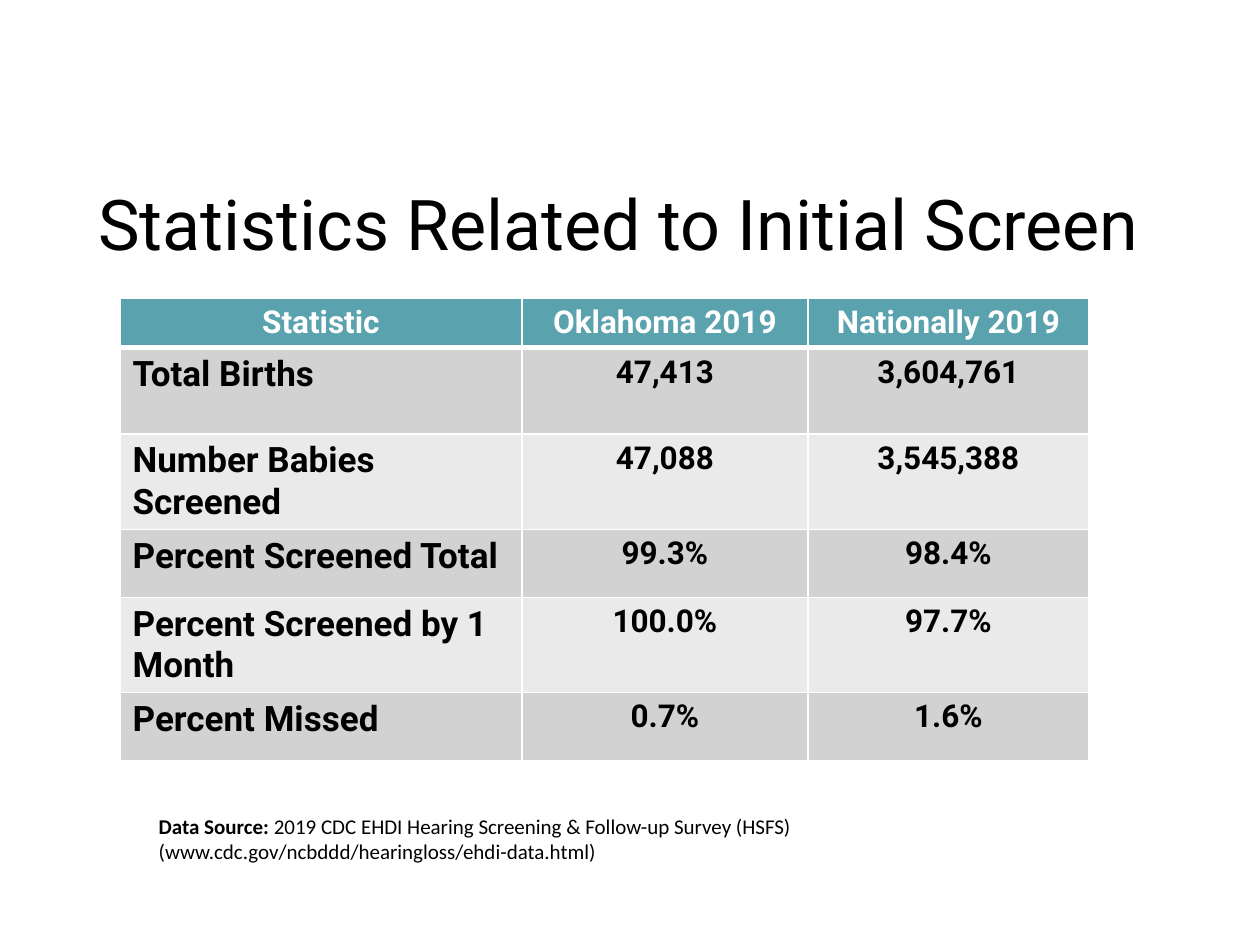
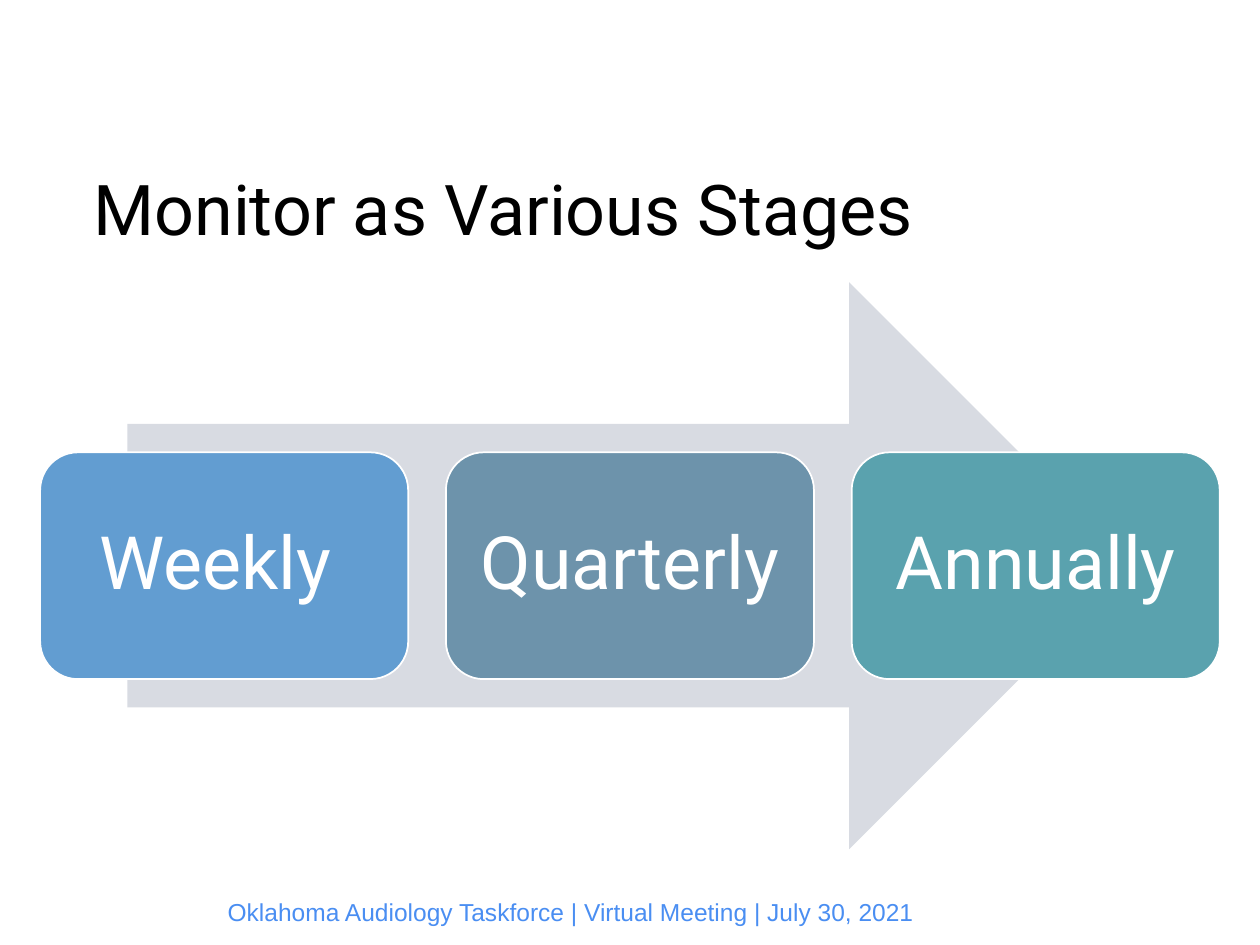
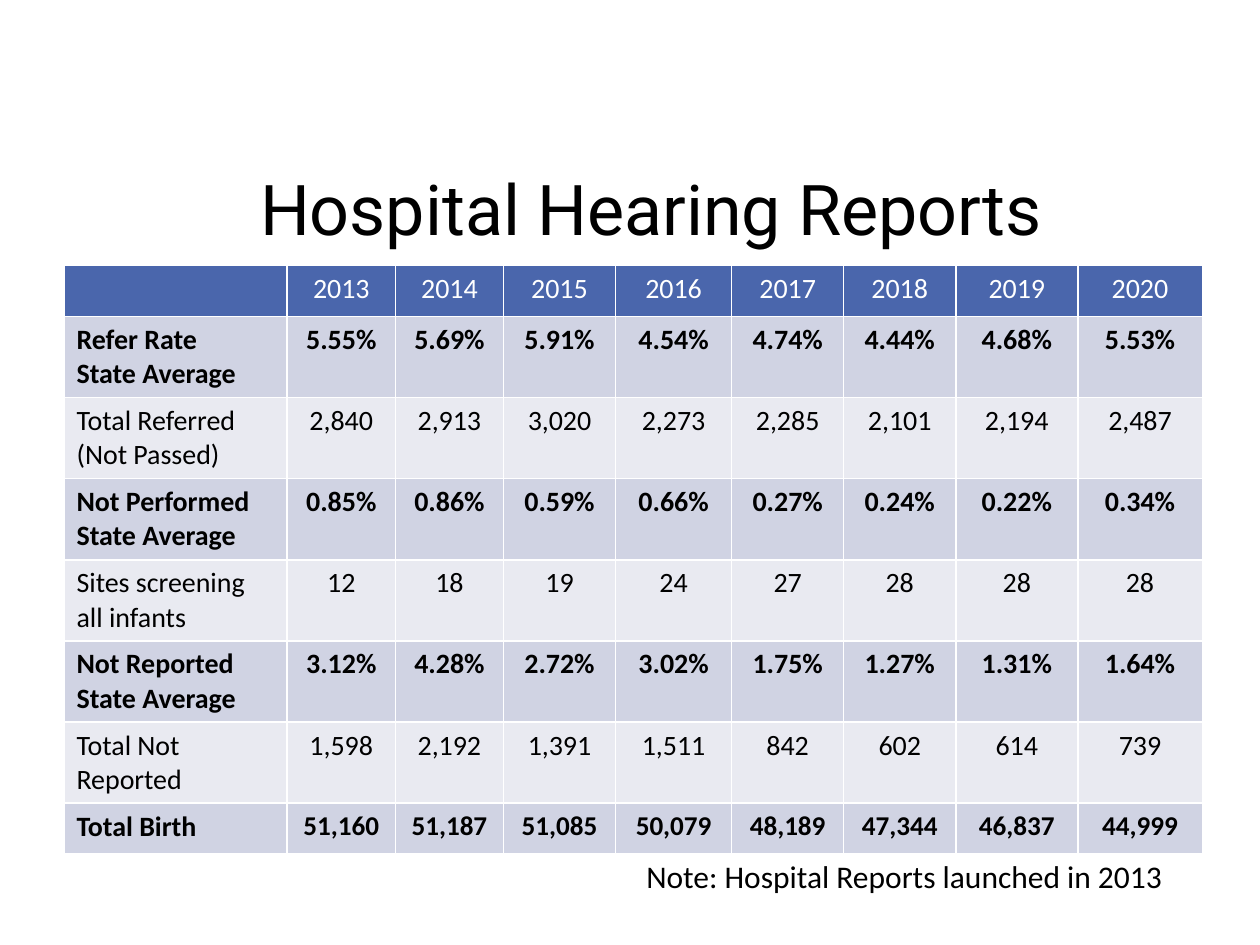
from lxml import etree
from pptx import Presentation
from pptx.dml.color import RGBColor
from pptx.enum.shapes import MSO_SHAPE
from pptx.enum.text import MSO_ANCHOR, MSO_AUTO_SIZE, PP_ALIGN
from pptx.oxml.ns import qn
from pptx.util import Cm, Pt

LEFT, CENTER = PP_ALIGN.LEFT, PP_ALIGN.CENTER
BOTTOM, MIDDLE = MSO_ANCHOR.BOTTOM, MSO_ANCHOR.MIDDLE
NO_AUTOFIT = MSO_AUTO_SIZE.NONE
ARROW, ROUND_RECT = MSO_SHAPE.RIGHT_ARROW, MSO_SHAPE.ROUNDED_RECTANGLE
BLACK = RGBColor(0x00, 0x00, 0x00)
WHITE = RGBColor(0xFF, 0xFF, 0xFF)
TEAL = RGBColor(0x5A, 0xA2, 0xAE)
SKY = RGBColor(0x62, 0x9D, 0xD1)
SLATE = RGBColor(0x6D, 0x93, 0xAB)
NAVY = RGBColor(0x4A, 0x66, 0xAC)
PALE_ARROW = RGBColor(0xD8, 0xDB, 0xE2)
FOOTER_BLUE = RGBColor(0x4A, 0x8E, 0xF2)
GREY_BANDS = (RGBColor(0xD2, 0xD2, 0xD3), RGBColor(0xEA, 0xEA, 0xEA))
BLUE_BANDS = (RGBColor(0xD0, 0xD3, 0xE3), RGBColor(0xE9, 0xEA, 0xF1))
HEAD_FONT, BODY_FONT, FOOTER_FONT = "Roboto", "Calibri", "Arial"

SCREEN_ROWS = [
    ("Statistic", "Oklahoma 2019", "Nationally 2019"),
    ("Total Births", "47,413", "3,604,761"),
    ("Number Babies Screened", "47,088", "3,545,388"),
    ("Percent Screened Total", "99.3%", "98.4%"),
    ("Percent Screened by 1 Month", "100.0%", "97.7%"),
    ("Percent Missed", "0.7%", "1.6%"),
]
HOSPITAL_ROWS = [
    ("", "2013", "2014", "2015", "2016", "2017", "2018", "2019", "2020"),
    ("Refer Rate\nState Average", "5.55%", "5.69%", "5.91%", "4.54%",
     "4.74%", "4.44%", "4.68%", "5.53%"),
    ("Total Referred (Not Passed)", "2,840", "2,913", "3,020", "2,273",
     "2,285", "2,101", "2,194", "2,487"),
    ("Not Performed State Average", "0.85%", "0.86%", "0.59%", "0.66%",
     "0.27%", "0.24%", "0.22%", "0.34%"),
    ("Sites screening all infants", "12", "18", "19", "24",
     "27", "28", "28", "28"),
    ("Not Reported State Average", "3.12%", "4.28%", "2.72%", "3.02%",
     "1.75%", "1.27%", "1.31%", "1.64%"),
    ("Total Not Reported", "1,598", "2,192", "1,391", "1,511",
     "842", "602", "614", "739"),
    ("Total Birth", "51,160", "51,187", "51,085", "50,079",
     "48,189", "47,344", "46,837", "44,999"),
]
STAGES = [("Weekly ", SKY), ("Quarterly", SLATE), ("Annually", TEAL)]


def add_run(p, text, size, font, color=BLACK, bold=False):
    """Append one formatted run to a paragraph."""
    r = p.add_run()
    r.text = text
    r.font.size, r.font.name, r.font.bold = Pt(size), font, bold
    r.font.color.rgb = color


def add_titled_slide(prs, text, left=1.63, top=2.44, align=LEFT):
    """Add a title-only slide and set its title."""
    s = prs.slides.add_slide(prs.slide_layouts[5])
    title = s.shapes.title
    title.left, title.top = Cm(left), Cm(top)
    title.width, title.height = Cm(22.99), Cm(2.74)
    tf = title.text_frame
    tf.auto_size, tf.vertical_anchor = NO_AUTOFIT, BOTTOM
    p = tf.paragraphs[0]
    p.alignment, p.line_spacing = align, 0.9
    add_run(p, text, 40, HEAD_FONT)
    return s


def add_text(s, box, runs, size, font, color=BLACK):
    """Add a wrapped text box from (text, bold) runs."""
    tf = s.shapes.add_textbox(*map(Cm, box)).text_frame
    tf.word_wrap = True
    for text, bold in runs:
        add_run(tf.paragraphs[0], text, size, font, color, bold)


def set_borders(cell, top, bottom):
    """Draw white cell borders with the given top and bottom widths."""
    tcPr = cell._tc.get_or_add_tcPr()
    sides = (("L", 1), ("R", 1), ("T", top), ("B", bottom))
    for i, (side, width) in enumerate(sides):
        ln = etree.Element(qn(f"a:ln{side}"), w=str(Pt(width)))
        fill = etree.SubElement(ln, qn("a:solidFill"))
        etree.SubElement(fill, qn("a:srgbClr"), val=str(WHITE))
        tcPr.insert(i, ln)


def add_grid(s, left, top, widths, heights, rows, head_fill, bands, head_line, style):
    """Add a banded table whose text format is given by style(row, column)."""
    frame = s.shapes.add_table(len(rows), len(widths), Cm(left), Cm(top),
                               Cm(sum(widths)), Cm(sum(heights)))
    table = frame.table
    for column, width in zip(table.columns, widths):
        column.width = Cm(width)
    for i, (values, height) in enumerate(zip(rows, heights)):
        table.rows[i].height = Cm(height)
        for j, value in enumerate(values):
            cell = table.cell(i, j)
            cell.fill.solid()
            cell.fill.fore_color.rgb = bands[(i - 1) % 2] if i else head_fill
            set_borders(cell, head_line if i == 1 else 1, 1 if i else head_line)
            size, font, bold = style(i, j)
            for n, line in enumerate(value.split("\n")):
                tf = cell.text_frame
                p = tf.add_paragraph() if n else tf.paragraphs[0]
                p.alignment = LEFT if i and j == 0 else CENTER
                if line:
                    add_run(p, line, size, font, BLACK if i else WHITE, bold)


def add_block(s, kind, box, fill):
    """Add a filled shape without line or shadow."""
    sp = s.shapes.add_shape(kind, *map(Cm, box))
    sp.shadow.inherit = False
    sp.fill.solid()
    sp.fill.fore_color.rgb = fill
    sp.line.fill.background()
    return sp


def add_stages(s, left, top, width, height):
    """Place equal stage cards across an arrow that fills the box height."""
    inset = width * 0.074
    add_block(s, ARROW, (left + inset, top, width - 2 * inset, height), PALE_ARROW)
    card_w, card_h = 7.42, height * 0.4
    step = (width - card_w) / (len(STAGES) - 1)
    for i, (name, fill) in enumerate(STAGES):
        box = (left + i * step, top + (height - card_h) / 2, card_w, card_h)
        sp = add_block(s, ROUND_RECT, box, fill)
        sp.line.color.rgb, sp.line.width = WHITE, Pt(1)
        tf = sp.text_frame
        tf.word_wrap, tf.vertical_anchor = True, MIDDLE
        tf.margin_left = tf.margin_right = Cm(0.3)
        p = tf.paragraphs[0]
        p.alignment, p.line_spacing = CENTER, 0.9
        add_run(p, name, 42, HEAD_FONT, WHITE)


def screen_style(i, j):
    """Give size, font and weight for a screening table cell."""
    return (20 if i and j == 0 else 18), HEAD_FONT, True


def hospital_style(i, j):
    """Give size, font and weight for a hospital table cell."""
    last = i == len(HOSPITAL_ROWS) - 1
    return (15.5 if last and j else 16), BODY_FONT, i % 2 == 1


def build_screening(prs):
    """Build the slide of initial screen statistics."""
    s = add_titled_slide(prs, "Statistics Related to Initial Screen", 1.73, 2.74)
    add_grid(s, 2.42, 6.01, (8.1, 5.77, 5.66), (1, 1.74, 1.92, 1.37, 1.92, 1.37),
             SCREEN_ROWS, TEAL, GREY_BANDS, 3, screen_style)
    source = [
        ("Data Source: ", True),
        ("2019 CDC EHDI Hearing Screening & Follow-up Survey (HSFS) "
         "(www.cdc.gov/ncbddd/hearingloss/ehdi-data.html)", False),
    ]
    add_text(s, (2.95, 16.28, 18.06, 1.88), source, 12, BODY_FONT)


def build_monitoring(prs):
    """Build the slide of monitoring stages."""
    s = add_titled_slide(prs, "Monitor as Various Stages")
    add_stages(s, 0.81, 5.69, 23.78, 11.43)
    footer = "Oklahoma Audiology Taskforce | Virtual Meeting | July 30, 2021"
    add_text(s, (4.34, 17.96, 16.97, 0.41), [(footer, False)], 14,
             FOOTER_FONT, FOOTER_BLUE)


def build_hospitals(prs):
    """Build the slide of yearly hospital reports."""
    s = add_titled_slide(prs, "Hospital Hearing Reports", align=CENTER)
    widths = (4.5, 2.18, 2.18, 2.26, 2.34, 2.26, 2.26, 2.46, 2.51)
    add_grid(s, 1.29, 5.35, widths, (1.03, *[1.63] * 6, 1.03), HOSPITAL_ROWS,
             NAVY, BLUE_BANDS, 1, hospital_style)
    add_text(s, (12.78, 17.15, 12.62, 1.02),
             [("Note: Hospital Reports launched in 2013", False)], 18, BODY_FONT)


def main():
    """Build and save the presentation."""
    prs = Presentation()
    prs.slide_width, prs.slide_height = Cm(25.4), Cm(19.05)
    build_screening(prs)
    build_monitoring(prs)
    build_hospitals(prs)
    prs.save("out.pptx")


if __name__ == "__main__":
    main()
